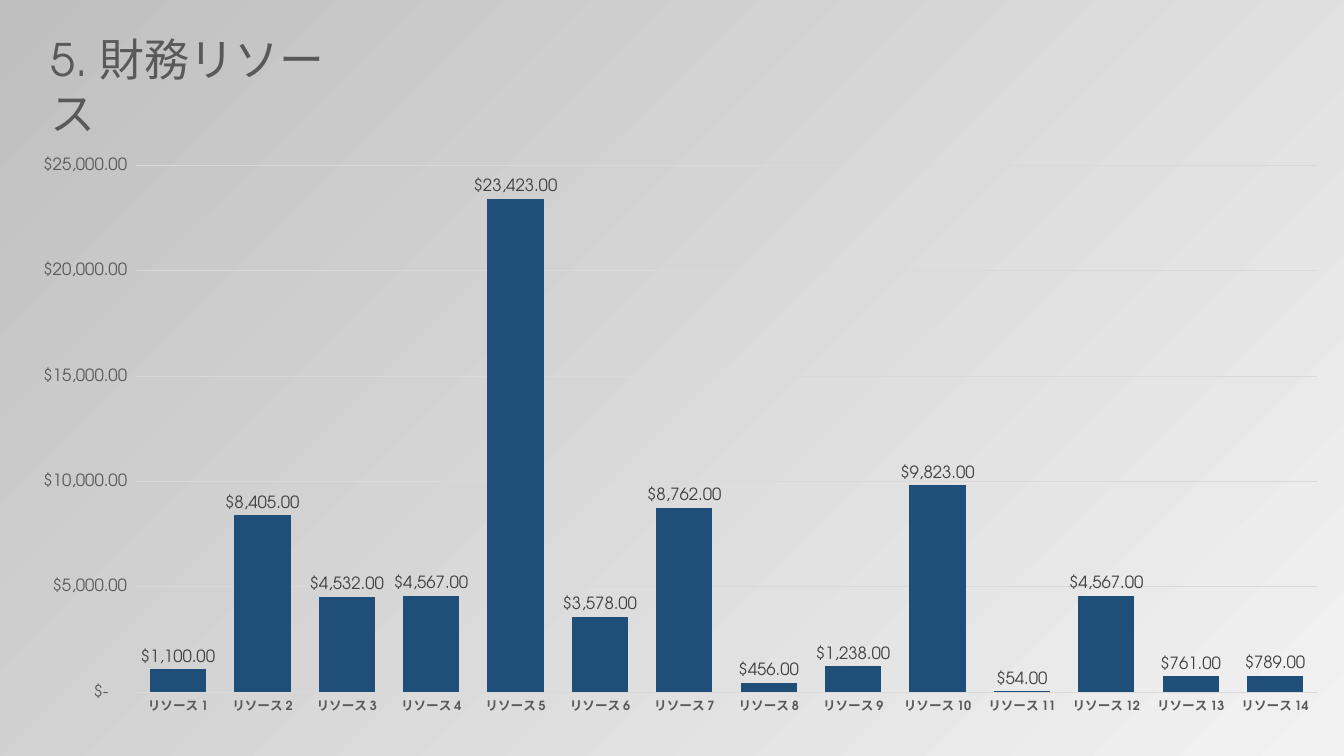
from dataclasses import dataclass

from pptx import Presentation
from pptx.chart.data import CategoryChartData
from pptx.dml.color import RGBColor
from pptx.enum.chart import XL_CHART_TYPE, XL_LABEL_POSITION, XL_TICK_MARK
from pptx.enum.text import MSO_AUTO_SIZE
from pptx.util import Inches, Pt


@dataclass(frozen=True)
class Theme:
    """Colours, type sizes and number format of the slide."""
    font: str = "TeX Gyre Adventor"
    light: str = "F2F2F2"
    dark: str = "BFBFBF"
    bar: str = "1F4E79"
    grid: str = "D9D9D9"
    muted: str = "595959"
    label: str = "404040"
    black: str = "000000"
    title_size: float = 32
    value_size: float = 12
    chart_size: float = 10
    category_size: float = 9
    currency: str = r'_("$"* #,##0.00_);_("$"* \(#,##0.00\);_("$"* "-"??_);_(@_)'


class SlideBuilder:
    """Adds styled elements to one slide."""

    def __init__(self, slide, theme):
        self.slide = slide
        self.theme = theme

    def style_font(self, font, size, color, bold=False):
        """Apply the theme typeface with a size and colour."""
        font.name = self.theme.font
        font.size = Pt(size)
        font.bold = bold
        font.color.rgb = RGBColor.from_string(color)

    def style_line(self, line):
        """Draw a thin grid-coloured line."""
        line.color.rgb = RGBColor.from_string(self.theme.grid)
        line.width = Pt(0.75)

    def background(self):
        """Fill the background with a diagonal gradient."""
        fill = self.slide.background.fill
        fill.gradient()
        fill.gradient_angle = 135
        for stop, color in zip(fill.gradient_stops, (self.theme.light, self.theme.dark)):
            stop.color.rgb = RGBColor.from_string(color)

    def title(self, text, left, top, width, height):
        """Add the wrapped title."""
        box = self.slide.shapes.add_textbox(
            Inches(left), Inches(top), Inches(width), Inches(height))
        frame = box.text_frame
        frame.word_wrap = True
        frame.auto_size = MSO_AUTO_SIZE.SHAPE_TO_FIT_TEXT
        frame.text = text
        self.style_font(frame.paragraphs[0].runs[0].font,
                        self.theme.title_size, self.theme.muted)

    def column_chart(self, categories, values, left, top, width, height):
        """Add a currency column chart with value labels."""
        theme = self.theme
        data = CategoryChartData(number_format=theme.currency)
        data.categories = categories
        data.add_series("Series 1", values)
        chart = self.slide.shapes.add_chart(
            XL_CHART_TYPE.COLUMN_CLUSTERED, Inches(left), Inches(top),
            Inches(width), Inches(height), data).chart
        chart.has_legend = False
        chart.has_title = False
        self.style_font(chart.font, theme.chart_size, theme.black)
        self.style_axes(chart)

        plot = chart.plots[0]
        plot.gap_width = 50
        plot.vary_by_categories = False
        series = plot.series[0]
        series.invert_if_negative = False
        series.format.fill.solid()
        series.format.fill.fore_color.rgb = RGBColor.from_string(theme.bar)
        labels = series.data_labels
        labels.show_value = True
        labels.position = XL_LABEL_POSITION.OUTSIDE_END
        labels.number_format = theme.currency
        labels.number_format_is_linked = False
        self.style_font(labels.font, theme.value_size, theme.label)

    def style_axes(self, chart):
        """Format both axes and the gridlines."""
        theme = self.theme
        category, value = chart.category_axis, chart.value_axis
        for axis in (category, value):
            axis.major_tick_mark = axis.minor_tick_mark = XL_TICK_MARK.NONE
        self.style_font(category.tick_labels.font, theme.category_size, theme.muted, True)
        self.style_font(value.tick_labels.font, theme.value_size, theme.muted)
        self.style_line(category.format.line)
        self.style_line(value.major_gridlines.format.line)
        value.format.line.fill.background()
        value.minimum_scale, value.maximum_scale, value.major_unit = 0, 25000, 5000
        value.tick_labels.number_format = theme.currency
        value.tick_labels.number_format_is_linked = False


def main():
    """Build and save the slide."""
    presentation = Presentation()
    presentation.slide_width = Inches(13.33)
    presentation.slide_height = Inches(7.5)
    slide = presentation.slides.add_slide(presentation.slide_layouts[6])
    costs = (1100, 8405, 4532, 4567, 23423, 3578, 8762,
             456, 1238, 9823, 54, 4567, 761, 789)
    resources = [f"リソース {number}" for number in range(1, len(costs) + 1)]

    builder = SlideBuilder(slide, Theme())
    builder.background()
    builder.column_chart(resources, costs, 0.12, 1.45, 13.21, 5.75)
    builder.title("5. 財務リソース", 0.4, 0.27, 3.13, 0.64)
    presentation.save("out.pptx")


if __name__ == "__main__":
    main()
